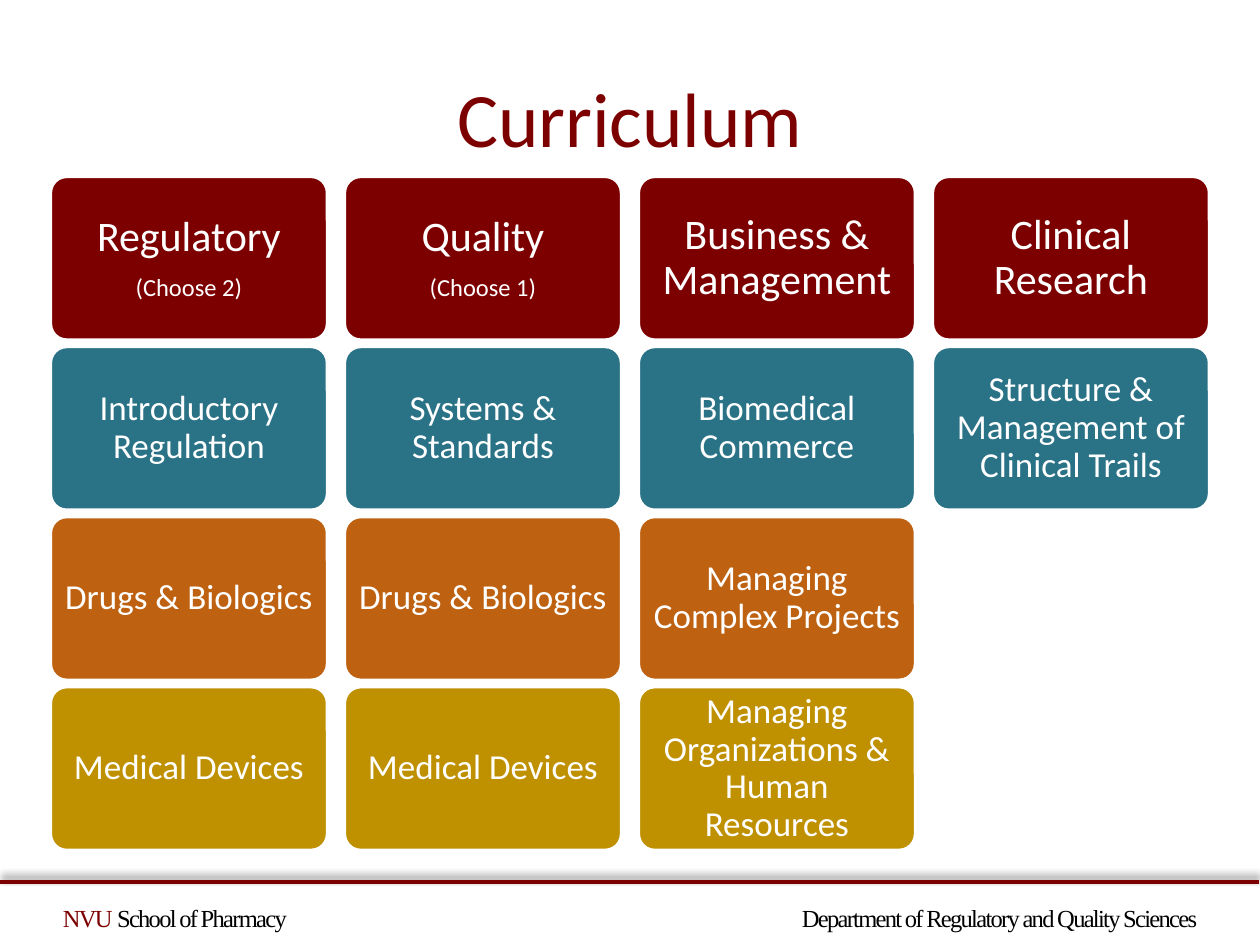
from lxml import etree
from pptx import Presentation
from pptx.dml.color import RGBColor
from pptx.enum import shapes, text
from pptx.oxml import ns
from pptx.util import Inches, Pt

COLORS = {
    "cardinal": "7D0000",
    "teal": "2A7286",
    "orange": "BE6111",
    "gold": "BF9000",
    "white": "FFFFFF",
    "black": "000000",
}
ROW_COLORS = ["cardinal", "teal", "orange", "gold"]
TRACKS = [
    [["Regulatory", "(Choose 2)"], "Introductory Regulation",
     "Drugs & Biologics", "Medical Devices"],
    [["Quality", "(Choose 1)"], "Systems & Standards",
     "Drugs & Biologics", "Medical Devices"],
    [["Business & Management"], "Biomedical Commerce",
     "Managing Complex Projects", "Managing Organizations & Human Resources"],
    [["Clinical Research"], "Structure & Management of Clinical Trails"],
]
LEFT, TOP = 0.4, 1.4
CARD_W, CARD_H = 2.2, 1.3
COL_STEP, ROW_STEP = 7 / 3, 1.35


def rgb(name):
    return RGBColor.from_string(COLORS[name])


def add_xml(parent, tag, **attrs):
    return etree.SubElement(parent, ns.qn(tag), attrs)


def add_run(p, content, size=20, font="Calibri", color="white", spacing=None):
    """Add formatted text to a paragraph; spacing is in points."""
    r = p.add_run()
    r.text = content
    r.font.size = Pt(size)
    r.font.name = font
    r.font.color.rgb = rgb(color)
    if spacing is not None:
        r.font._element.set("spc", str(round(spacing * 100)))


def set_frame(tf, left=0.1, top=0.05, right=0.1, bottom=0.05):
    tf.word_wrap = True
    tf.vertical_anchor = text.MSO_ANCHOR.MIDDLE
    tf.margin_left, tf.margin_top = Inches(left), Inches(top)
    tf.margin_right, tf.margin_bottom = Inches(right), Inches(bottom)


def add_box(s, x, y, w, h, **margins):
    """Add an empty text box and return its first paragraph."""
    sp = s.shapes.add_textbox(Inches(x), Inches(y), Inches(w), Inches(h))
    set_frame(sp.text_frame, **margins)
    return sp.text_frame.paragraphs[0]


def add_card(s, x, y, fill, lines, sizes, margin):
    sp = s.shapes.add_shape(shapes.MSO_SHAPE.ROUNDED_RECTANGLE,
                            Inches(x), Inches(y), Inches(CARD_W), Inches(CARD_H))
    sp.adjustments[0] = 0.1
    sp.shadow.inherit = False
    sp.fill.solid()
    sp.fill.fore_color.rgb = rgb(fill)
    sp.line.color.rgb = rgb("white")
    sp.line.width = Pt(2)
    tf = sp.text_frame
    set_frame(tf, margin, margin, margin, margin)
    for i, (line, size) in enumerate(zip(lines, sizes)):
        p = tf.add_paragraph() if i else tf.paragraphs[0]
        p.alignment = text.PP_ALIGN.CENTER
        p.line_spacing = 0.9
        after = add_xml(p._p.get_or_add_pPr(), "a:spcAft")
        add_xml(after, "a:spcPct", val="35000")
        add_run(p, line, size=size)


def add_footer(s):
    p = add_box(s, 0, 7.07, 10, 0.43, left=0.5, top=0, right=0, bottom=0)
    tabs = add_xml(p._p.get_or_add_pPr(), "a:tabLst")
    add_xml(tabs, "a:tab", pos=str(Inches(9)), algn="r")
    style = {"size": 14, "font": "Times New Roman", "spacing": -1}
    add_run(p, "NVU", color="cardinal", **style)
    add_run(p, " School of Pharmacy\tDepartment of Regulatory and Quality Sciences",
            color="black", **style)


def add_rule(s):
    """Draw the footer line with a soft shadow above it."""
    line = s.shapes.add_connector(shapes.MSO_CONNECTOR.STRAIGHT,
                                  Inches(0), Inches(7), Inches(9.99), Inches(7))
    line.line.color.rgb = rgb("cardinal")
    line.line.width = Pt(2)
    effects = add_xml(line._element.spPr, "a:effectLst")
    shadow = add_xml(effects, "a:outerShdw", blurRad=str(Pt(4)), dist=str(Pt(3)),
                     dir=str(270 * 60000), rotWithShape="0")
    color = add_xml(shadow, "a:srgbClr", val=COLORS["black"])
    add_xml(color, "a:alpha", val="40000")


def main():
    prs = Presentation()
    prs.slide_width, prs.slide_height = Inches(10), Inches(7.5)
    s = prs.slides.add_slide(prs.slide_layouts[6])

    add_footer(s)
    add_rule(s)
    title = add_box(s, 0.5, 0.3, 9, 1.25)
    title.alignment = text.PP_ALIGN.CENTER
    add_run(title, "Curriculum", size=44, color="cardinal")

    for col, (heading, *courses) in enumerate(TRACKS):
        x = LEFT + col * COL_STEP
        add_card(s, x, TOP, ROW_COLORS[0], heading, [24, 14], 0.09)
        for row, course in enumerate(courses, 1):
            add_card(s, x, TOP + row * ROW_STEP, ROW_COLORS[row], [course], [20], 0.07)

    prs.save("out.pptx")


if __name__ == "__main__":
    main()
